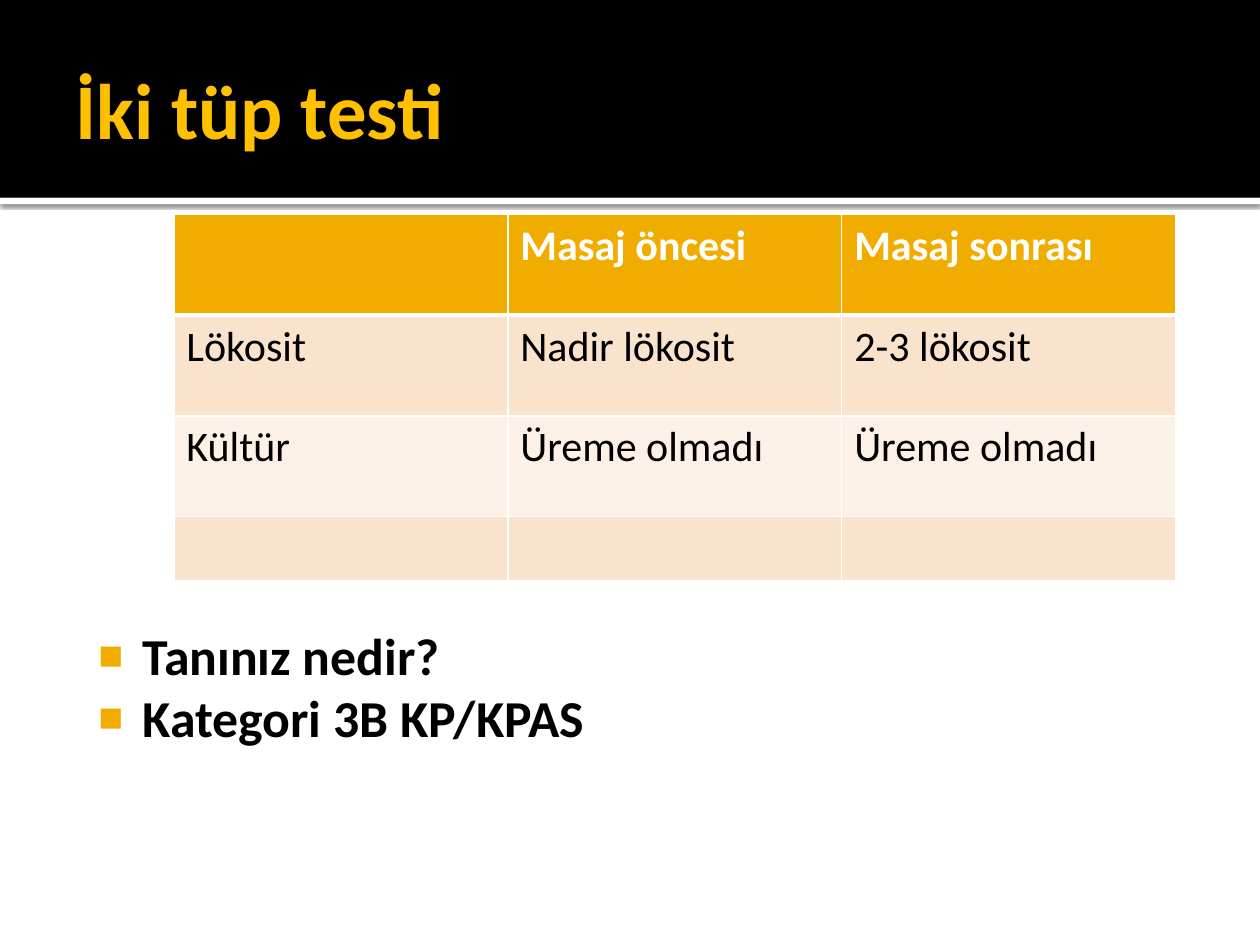
from lxml.etree import SubElement
from pptx import Presentation
from pptx.dml.color import RGBColor
from pptx.enum.shapes import MSO_SHAPE
from pptx.enum.text import MSO_ANCHOR, MSO_AUTO_SIZE, PP_ALIGN
from pptx.oxml import parse_xml
from pptx.oxml.ns import nsdecls, qn
from pptx.util import Inches, Pt

BLACK = RGBColor(0x00, 0x00, 0x00)
WHITE = RGBColor(0xFF, 0xFF, 0xFF)
GOLD = RGBColor(0xFF, 0xC0, 0x00)
AMBER = RGBColor(0xF0, 0xAD, 0x00)
PEACH = RGBColor(0xF9, 0xE3, 0xCC)
CREAM = RGBColor(0xFC, 0xF1, 0xE7)

SLIDE_WIDTH, SLIDE_HEIGHT = 10, 7.5
BAND_HEIGHT, RULE_HEIGHT = 1.57, 0.05
CELL_SIZE = 24

RESULTS = [
    ["", "Masaj öncesi", "Masaj sonrası"],
    ["Lökosit", "Nadir lökosit", "2-3 lökosit"],
    ["Kültür", "Üreme olmadı", "Üreme olmadı"],
    ["", "", ""],
]
ROW_HEIGHTS = [0.8, 0.8, 0.8, 0.44]
ROW_FILLS = [AMBER, PEACH, CREAM, PEACH]
QUESTIONS = ["Tanınız nedir?", "Kategori 3B KP/KPAS"]


def apply_format(target, values):
    for name, value in values.items():
        setattr(target, name, value)


def write(paragraph, text, size, color, bold):
    run = paragraph.add_run()
    run.text = text
    apply_format(run.font, {"name": "Calibri", "size": Pt(size), "bold": bold})
    run.font.color.rgb = color


def place(shape, box):
    names = ("left", "top", "width", "height")
    apply_format(shape, dict(zip(names, map(Inches, box))))


def set_frame(frame, insets, anchor):
    names = ("margin_left", "margin_top", "margin_right", "margin_bottom")
    apply_format(frame, dict(zip(names, map(Inches, insets))))
    apply_format(frame, {"word_wrap": True, "vertical_anchor": anchor,
                         "auto_size": MSO_AUTO_SIZE.NONE})


def add_bar(slide, box, color, layer):
    bar = slide.shapes.add_shape(MSO_SHAPE.RECTANGLE, *map(Inches, box))
    bar.shadow.inherit = False
    bar.fill.solid()
    bar.fill.fore_color.rgb = color
    bar.line.fill.background()
    # Bars lie behind the placeholders, after the tree's two property nodes
    slide.shapes.element.insert(2 + layer, bar.element)
    return bar


def add_header(slide, box):
    left, top, width, height = box
    rule = add_bar(slide, (left, top + height, width, RULE_HEIGHT), WHITE, 0)
    effects = rule.element.spPr.find(qn("a:effectLst"))
    effects.append(parse_xml(
        f'<a:outerShdw {nsdecls("a")} blurRad="{Pt(2.5)}" dist="{Pt(0.8)}" '
        'dir="5400000" algn="t" rotWithShape="0"><a:srgbClr val="000000">'
        '<a:alpha val="60000"/></a:srgbClr></a:outerShdw>'))
    add_bar(slide, box, BLACK, 1)

    title = slide.shapes.title
    place(title, (left + 0.05 * width, top + 0.17, 0.9 * width, 1.37))
    set_frame(title.text_frame, (0.1, 0.05, 0.05, 0.05), MSO_ANCHOR.MIDDLE)
    heading = title.text_frame.paragraphs[0]
    heading.alignment = PP_ALIGN.LEFT
    write(heading, "İki tüp testi", 45, GOLD, True)


def set_borders(cell, widths):
    properties = cell._tc.get_or_add_tcPr()
    for index, (side, width) in enumerate(widths.items()):
        properties.insert(index, parse_xml(
            f'<a:ln{side} {nsdecls("a")} w="{Pt(width)}"><a:solidFill>'
            f'<a:srgbClr val="{WHITE}"/></a:solidFill></a:ln{side}>'))


def add_results(slide, box):
    row_count, column_count = len(RESULTS), len(RESULTS[0])
    table = slide.shapes.add_table(
        row_count, column_count, *map(Inches, box)).table
    for column in table.columns:
        column.width = Inches(box[2] / column_count)
    for index, entries in enumerate(RESULTS):
        table.rows[index].height = Inches(ROW_HEIGHTS[index])
        is_header = index == 0
        for column, entry in enumerate(entries):
            cell = table.cell(index, column)
            cell.fill.solid()
            cell.fill.fore_color.rgb = ROW_FILLS[index]
            set_borders(cell, {"L": 1, "R": 1, "T": 3 if index == 1 else 1,
                               "B": 3 if is_header else 1})
            paragraph = cell.text_frame.paragraphs[0]
            if entry:
                write(paragraph, entry, CELL_SIZE,
                      WHITE if is_header else BLACK, is_header)
            else:
                # Empty cells keep the height of the table's text
                SubElement(paragraph._p, qn("a:endParaRPr"),
                           sz=str(CELL_SIZE * 100))


def add_questions(slide, box):
    body = slide.placeholders[1]
    place(body, box)
    frame = body.text_frame
    set_frame(frame, (0.06, 0.1, 0.1, 0.05), MSO_ANCHOR.TOP)
    for index, question in enumerate(QUESTIONS):
        paragraph = frame.add_paragraph() if index else frame.paragraphs[0]
        apply_format(paragraph, {"space_before": Pt(0), "space_after": Pt(0)})
        properties = paragraph._p.get_or_add_pPr()
        properties.set("marL", str(Inches(0.48)))
        properties.set("indent", str(Inches(-0.35)))
        color = SubElement(properties, qn("a:buClr"))
        SubElement(color, qn("a:srgbClr"), val=str(AMBER))
        SubElement(properties, qn("a:buSzPct"), val="80000")
        SubElement(properties, qn("a:buChar"), char="■")
        write(paragraph, question, 29.6, BLACK, True)


def main():
    deck = Presentation()
    deck.slide_width = Inches(SLIDE_WIDTH)
    deck.slide_height = Inches(SLIDE_HEIGHT)
    slide = deck.slides.add_slide(deck.slide_layouts[1])
    add_header(slide, (0, 0, SLIDE_WIDTH, BAND_HEIGHT))
    add_results(slide, (1.38, 1.7, 7.95, sum(ROW_HEIGHTS)))
    add_questions(slide, (0.59, 4.85, 0.9 * SLIDE_WIDTH, 1.02))
    deck.save("out.pptx")


if __name__ == "__main__":
    main()
